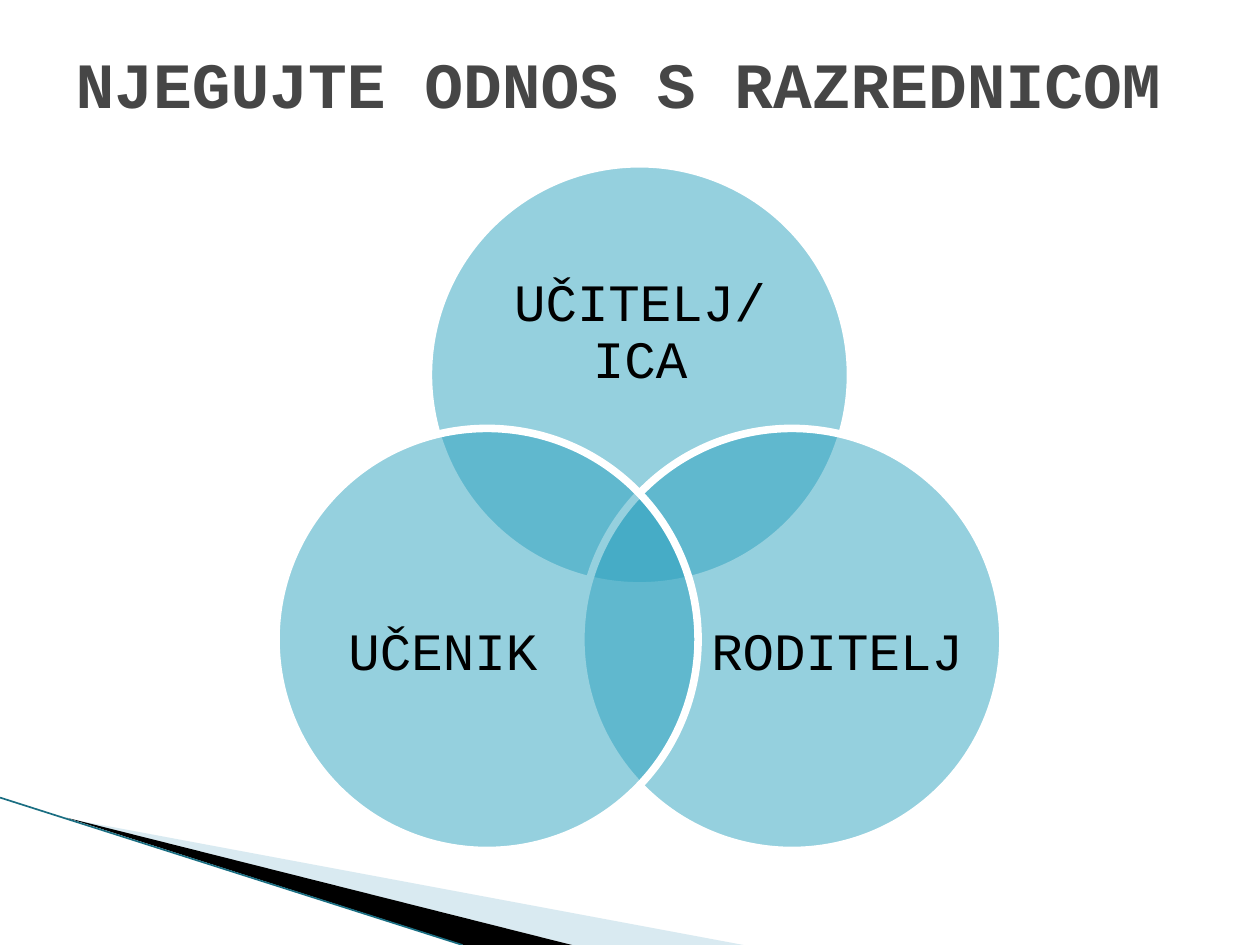
import pptx
import pptx.util
import pptx.dml.color
import pptx.enum.shapes
import pptx.enum.text
from pptx.oxml.ns import qn
from lxml import etree

Inches, Pt = pptx.util.Inches, pptx.util.Pt
MSO_ANCHOR, PP_ALIGN = pptx.enum.text.MSO_ANCHOR, pptx.enum.text.PP_ALIGN

COLORS = {
    "title": "464646",
    "text": "000000",
    "circle": "2DA2BF",
    "outline": "FFFFFF",
    "pale": "A0CBDC",
    "dark": "000000",
    "edge": "1A6E82",
}


class SlideBuilder:
    font = "Courier New"

    def __init__(self, prs):
        self.s = prs.slides.add_slide(prs.slide_layouts[5])

    def color(self, name):
        return pptx.dml.color.RGBColor.from_string(COLORS[name])

    def fill(self, sp, name, opacity=100):
        sp.shadow.inherit = False
        sp.fill.solid()
        sp.fill.fore_color.rgb = self.color(name)
        if opacity < 100:
            clr = sp._element.spPr.find(qn("a:solidFill"))[0]
            etree.SubElement(clr, qn("a:alpha")).set("val", str(opacity * 1000))

    def style(self, p, size, color, bold=False):
        p.font.name = self.font
        p.font.size = Pt(size)
        p.font.bold = bold
        p.font.color.rgb = self.color(color)

    def title(self, text, x, y, w, h):
        sp = self.s.shapes.title
        sp.left, sp.top, sp.width, sp.height = map(Inches, (x, y, w, h))
        tf = sp.text_frame
        tf.text = text
        tf.vertical_anchor = MSO_ANCHOR.TOP
        p = tf.paragraphs[0]
        p.alignment = PP_ALIGN.LEFT
        self.style(p, 36.9, "title", bold=True)

    def wedge(self, points, color, opacity=100):
        start, *rest = [(Inches(x), Inches(y)) for x, y in points]
        fb = self.s.shapes.build_freeform(*start)
        fb.add_line_segments(rest, close=True)
        sp = fb.convert_to_shape()
        self.fill(sp, color, opacity)
        sp.line.fill.background()

    def line(self, x1, y1, x2, y2, color, width):
        c = self.s.shapes.add_connector(
            pptx.enum.shapes.MSO_CONNECTOR.STRAIGHT, *map(Inches, (x1, y1, x2, y2)))
        c.line.color.rgb = self.color(color)
        c.line.width = Pt(width)
        etree.SubElement(c._element.spPr, qn("a:effectLst"))

    def circle(self, x, y, d):
        sp = self.s.shapes.add_shape(
            pptx.enum.shapes.MSO_SHAPE.OVAL, *map(Inches, (x, y, d, d)))
        self.fill(sp, "circle", opacity=50)
        sp.line.color.rgb = self.color("outline")
        sp.line.width = Pt(4.33)

    def label(self, text, x, y, w, h):
        tf = self.s.shapes.add_textbox(*map(Inches, (x, y, w, h))).text_frame
        tf.word_wrap = True
        tf.margin_left = tf.margin_right = tf.margin_top = tf.margin_bottom = 0
        tf.vertical_anchor = MSO_ANCHOR.MIDDLE
        p = tf.paragraphs[0]
        p.text = text
        p.alignment = PP_ALIGN.CENTER
        p.line_spacing = 0.9
        self.style(p, 30, "text")


def main():
    prs = pptx.Presentation()
    prs.slide_width, prs.slide_height = Inches(10), Inches(7.5)
    b = SlideBuilder(prs)

    b.wedge([(0.55, 6.5), (5.9, 7.5), (4.54, 7.5)], "pale", opacity=40)
    b.wedge([(0.53, 6.49), (4.54, 7.5), (3.68, 7.5)], "dark")
    b.line(0, 6.33, 3.67, 7.5, "edge", 0.95)

    venn = [
        ((3.4, 1.3), "UČITELJ/ICA", (3.85, 1.89, 2.46, 1.51)),
        ((4.61, 3.4), "RODITELJ", (5.64, 4.26, 2.01, 1.85)),
        ((2.19, 3.4), "UČENIK", (2.51, 4.26, 2.01, 1.85)),
    ]
    for corner, text, box in venn:
        b.circle(*corner, 3.35)
        b.label(text, *box)

    b.title("NJEGUJTE ODNOS S RAZREDNICOM", 0.5, 0.3, 9, 1.25)
    prs.save("out.pptx")


if __name__ == "__main__":
    main()
